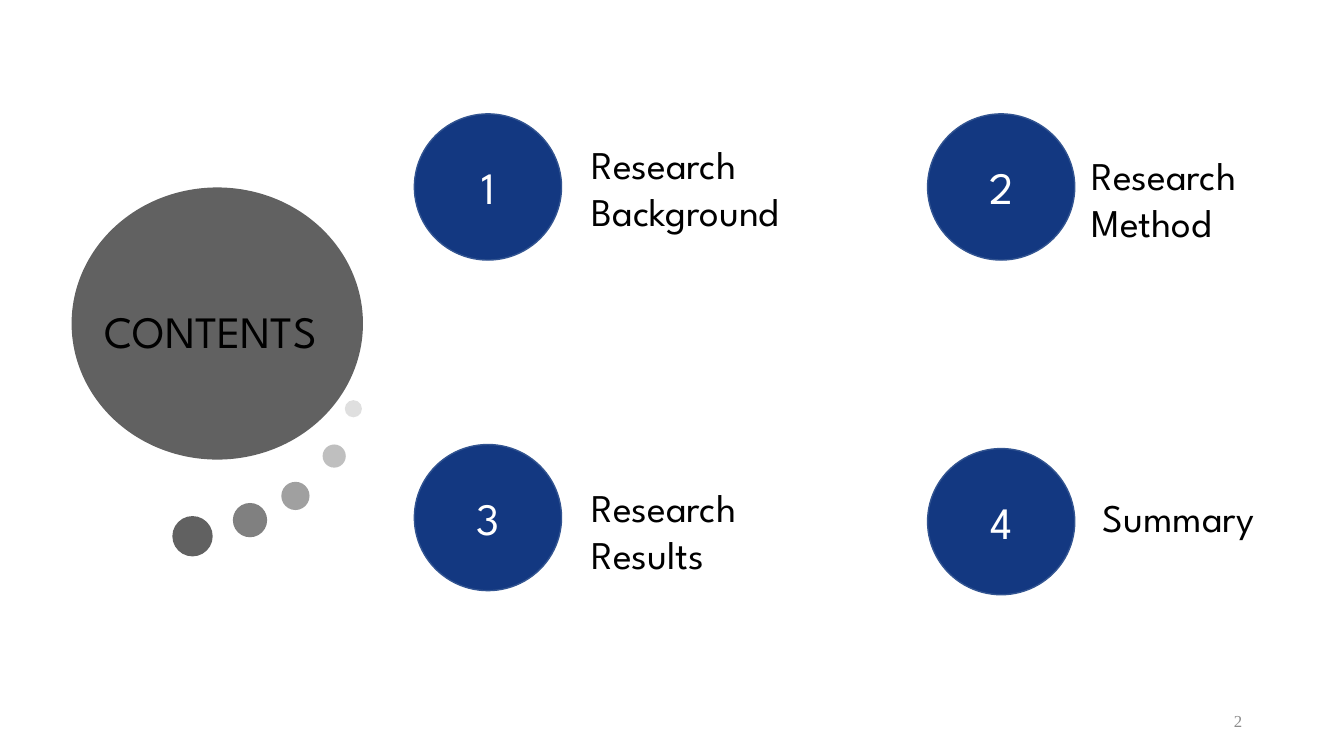
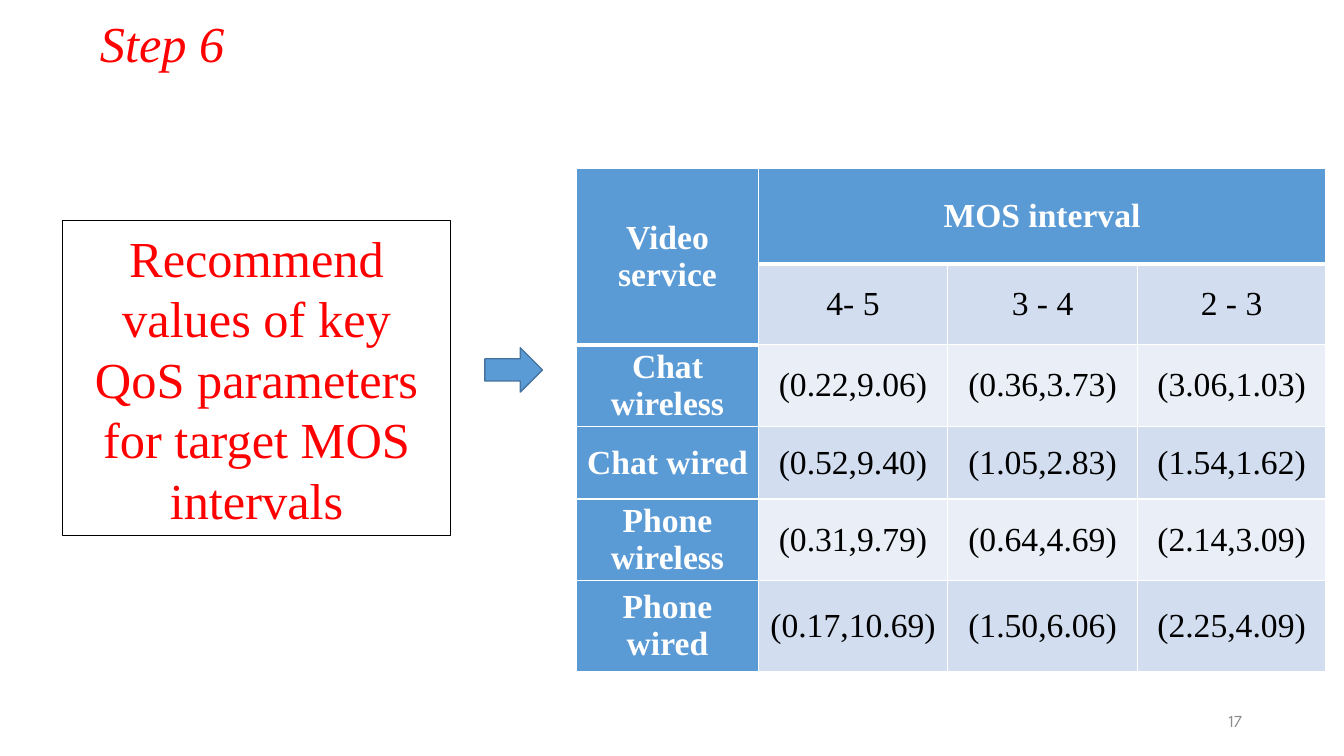
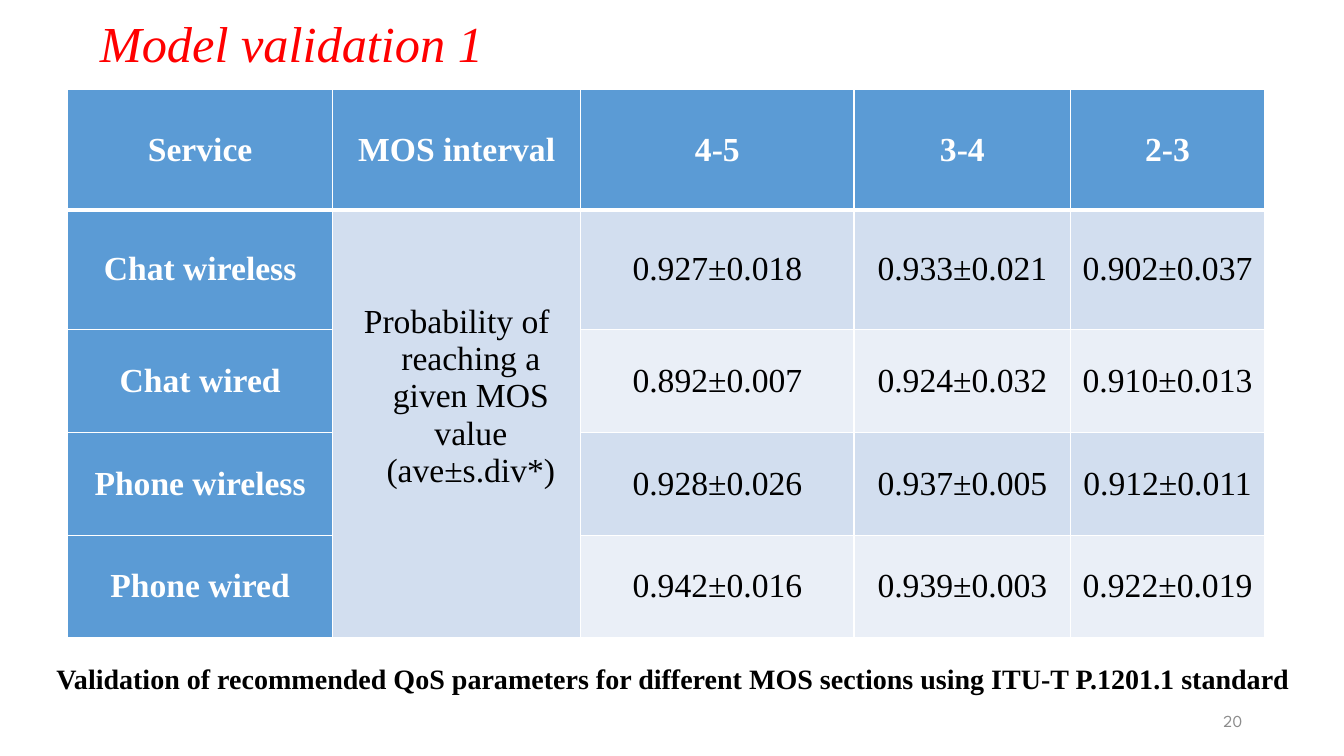
import pptx
import pptx.dml.color
import pptx.enum.shapes
import pptx.enum.text
import pptx.oxml
import pptx.oxml.ns
import pptx.util

Inches = pptx.util.Inches
Pt = pptx.util.Pt
rgb = pptx.dml.color.RGBColor.from_string
SHAPE = pptx.enum.shapes.MSO_SHAPE
ALIGN = pptx.enum.text.PP_ALIGN
ANCHOR = pptx.enum.text.MSO_ANCHOR
qn = pptx.oxml.ns.qn

SERIF, SANS = "Times New Roman", "League Spartan"
BLACK, WHITE, RED = "000000", "FFFFFF", "FF0000"
NAVY, NAVY_LINE = "133881", "325491"
BLUE, BLUE_LINE = "5B9BD5", "43739E"
BAND_DARK, BAND_LIGHT = "D2DEEF", "EAEFF7"
GREY, FOOTER_GREY = "616161", "8C8C8C"


def write(frame, text, size, color, font=SERIF, bold=False, italic=False,
          align=ALIGN.LEFT, anchor=ANCHOR.TOP):
    frame.word_wrap = True
    frame.vertical_anchor = anchor
    para = frame.paragraphs[0]
    para.alignment = align
    span = para.add_run()
    span.text = text
    span.font.name = font
    span.font.size = Pt(size)
    span.font.bold = bold
    span.font.italic = italic
    span.font.color.rgb = rgb(color)


def add_grid(page, left, top, widths, heights, rows, merges, head_cells):
    """Add a table with blue heads, banded values and white borders; None is a merged-away cell."""
    table = page.shapes.add_table(len(heights), len(widths), Inches(left), Inches(top),
                                  Inches(sum(widths)), Inches(sum(heights))).table
    for column, width in zip(table.columns, widths):
        column.width = Inches(width)
    for row, height in zip(table.rows, heights):
        row.height = Inches(height)
    for r, row in enumerate(rows):
        for c, text in enumerate(row):
            cell = table.cell(r, c)
            in_head = (r, c) in head_cells
            is_blue = in_head or c == 0
            properties = cell._tc.get_or_add_tcPr()
            # The head is closed by a thicker line than the body rows.
            for side in ("L", "R", "T", "B"):
                width = Pt(3 if side == "B" and in_head else 1)
                properties.append(pptx.oxml.parse_xml(
                    f'<a:ln{side} {pptx.oxml.ns.nsdecls("a")} w="{width}"><a:solidFill>'
                    f'<a:srgbClr val="{WHITE}"/></a:solidFill></a:ln{side}>'))
            band = BAND_DARK if r % 2 else BAND_LIGHT
            cell.fill.solid()
            cell.fill.fore_color.rgb = rgb(BLUE if is_blue else band)
            cell.margin_left = cell.margin_right = Inches(0.07)
            cell.margin_top = cell.margin_bottom = 0
            cell.vertical_anchor = ANCHOR.MIDDLE
            if text is not None:
                write(cell.text_frame, text, 24, WHITE if is_blue else BLACK,
                      bold=is_blue, align=ALIGN.CENTER, anchor=ANCHOR.MIDDLE)
    for start, end in merges:
        table.cell(*start).merge(table.cell(*end))
    return table


deck = pptx.Presentation()
deck.slide_width, deck.slide_height = Inches(13.33), Inches(7.5)
layout = deck.slide_layouts.get_by_name("Title Only")
heading = layout.placeholders[0]
heading.left, heading.top = Inches(0.89), Inches(0.07)
heading.width, heading.height = Inches(11.5), Inches(0.71)

# Every page has a number at the bottom right.
pages = []
for number, font in (("2", SERIF), ("17", SANS), ("20", SANS)):
    page = deck.slides.add_slide(layout)
    box = page.shapes.add_textbox(Inches(9.42), Inches(6.95), Inches(3), Inches(0.4))
    write(box.text_frame, number, 12, FOOTER_GREY, font, align=ALIGN.RIGHT,
          anchor=ANCHOR.MIDDLE)
    pages.append(page)
contents, step, validation = pages

for page, title in ((step, "Step 6"), (validation, "Model validation 1")):
    write(page.shapes.title.text_frame, title, 36, RED, italic=True)

# Contents: a grey bubble with a fading trail
bubbles = [
    (0.71, 1.86, 2.89, 2.7, 100),
    (1.71, 5.12, 0.4, 0.4, 100),
    (2.31, 4.99, 0.34, 0.34, 80),
    (2.79, 4.78, 0.28, 0.28, 60),
    (3.2, 4.41, 0.23, 0.23, 40),
    (3.42, 3.97, 0.17, 0.17, 20),
]
for left, top, width, height, opacity in bubbles:
    bubble = contents.shapes.add_shape(SHAPE.OVAL, Inches(left), Inches(top),
                                       Inches(width), Inches(height))
    bubble.shadow.inherit = False
    bubble.line.fill.background()
    bubble.fill.solid()
    bubble.fill.fore_color.rgb = rgb(GREY)
    if opacity < 100:
        color = bubble.element.spPr.find(".//" + qn("a:srgbClr"))
        color.append(pptx.oxml.parse_xml(
            f'<a:alpha {pptx.oxml.ns.nsdecls("a")} val="{opacity * 1000}"/>'))

title = contents.shapes.title
title.left, title.top = Inches(0.53), Inches(2.96)
title.width, title.height = Inches(3.12), Inches(0.64)
write(title.text_frame, "CONTENTS", 32, BLACK, SANS, align=ALIGN.CENTER)
title.element.getparent().append(title.element)  # in front of the bubble

topics = [
    ("1", 4.11, 1.13, "Research Background", 5.77, 1.34, 2.81, 1.04),
    ("2", 9.2, 1.13, "Research Method", 10.73, 1.45, 2.02, 1.04),
    ("3", 4.11, 4.41, "Research Results", 5.77, 4.75, 2.15, 1.04),
    ("4", 9.2, 4.45, "Summary", 10.84, 4.84, 2.18, 0.57),
]
for number, disc_left, disc_top, topic, left, top, width, height in topics:
    disc = contents.shapes.add_shape(SHAPE.OVAL, Inches(disc_left), Inches(disc_top),
                                     Inches(1.46), Inches(1.45))
    disc.shadow.inherit = False
    disc.fill.solid()
    disc.fill.fore_color.rgb = rgb(NAVY)
    disc.line.color.rgb = rgb(NAVY_LINE)
    disc.line.width = Pt(1)
    write(disc.text_frame, number, 32, WHITE, SANS, align=ALIGN.CENTER, anchor=ANCHOR.MIDDLE)
    label = contents.shapes.add_textbox(Inches(left), Inches(top), Inches(width), Inches(height))
    write(label.text_frame, topic, 28, BLACK, SANS)

# Step 6: the task, an arrow and the recommended values
task = step.shapes.add_shape(SHAPE.RECTANGLE, Inches(0.62), Inches(2.19),
                             Inches(3.85), Inches(3.12))
arrow = step.shapes.add_shape(SHAPE.RIGHT_ARROW, Inches(4.81), Inches(3.45),
                              Inches(0.57), Inches(0.44))
for shape, fill, line in ((task, WHITE, BLACK), (arrow, BLUE, BLUE_LINE)):
    shape.shadow.inherit = False
    shape.fill.solid()
    shape.fill.fore_color.rgb = rgb(fill)
    shape.line.color.rgb = rgb(line)
    shape.line.width = Pt(1)
write(task.text_frame, "Recommend values of key QoS parameters for target MOS intervals",
      36, RED, align=ALIGN.CENTER, anchor=ANCHOR.MIDDLE)

add_grid(
    step, 5.72, 1.67, [1.8, 1.88, 1.88, 1.87], [0.95, 0.8, 0.81, 0.72, 0.81, 0.9],
    [
        ["Video service", "MOS interval", None, None],
        [None, "4- 5", "3 - 4", "2 - 3"],
        ["Chat wireless", "(0.22,9.06)", "(0.36,3.73)", "(3.06,1.03)"],
        ["Chat wired", "(0.52,9.40)", "(1.05,2.83)", "(1.54,1.62)"],
        ["Phone wireless", "(0.31,9.79)", "(0.64,4.69)", "(2.14,3.09)"],
        ["Phone wired", "(0.17,10.69)", "(1.50,6.06)", "(2.25,4.09)"],
    ],
    merges=[((0, 0), (1, 0)), ((0, 1), (0, 3))],
    head_cells=[(0, 0), (1, 0), (0, 1), (0, 2), (0, 3)])

# Model validation: probabilities by service
probabilities = add_grid(
    validation, 0.67, 0.89, [2.63, 2.46, 2.71, 2.15, 1.92], [1.19, 1.19, 1.02, 1.02, 1.02],
    [
        ["Service", "MOS interval", "4-5", "3-4", "2-3"],
        ["Chat wireless", "Probability of reaching a given MOS value (ave±s.div*)",
         "0.927±0.018", "0.933±0.021", "0.902±0.037"],
        ["Chat wired", None, "0.892±0.007", "0.924±0.032", "0.910±0.013"],
        ["Phone wireless", None, "0.928±0.026", "0.937±0.005", "0.912±0.011"],
        ["Phone wired", None, "0.942±0.016", "0.939±0.003", "0.922±0.019"],
    ],
    merges=[((1, 1), (4, 1))],
    head_cells=[(0, c) for c in range(5)])
measure = probabilities.cell(1, 1)
measure.margin_bottom = Inches(0.54)
hanging = measure.text_frame.paragraphs[0]._p.get_or_add_pPr()
hanging.set("marL", str(Inches(0.28)))
hanging.set("indent", str(-Inches(0.28)))

caption = validation.shapes.add_textbox(Inches(0.46), Inches(6.51), Inches(12.55), Inches(0.44))
write(caption.text_frame,
      "Validation of recommended QoS parameters for different MOS sections "
      "using ITU-T P.1201.1 standard", 20, BLACK, bold=True)

deck.save("out.pptx")
